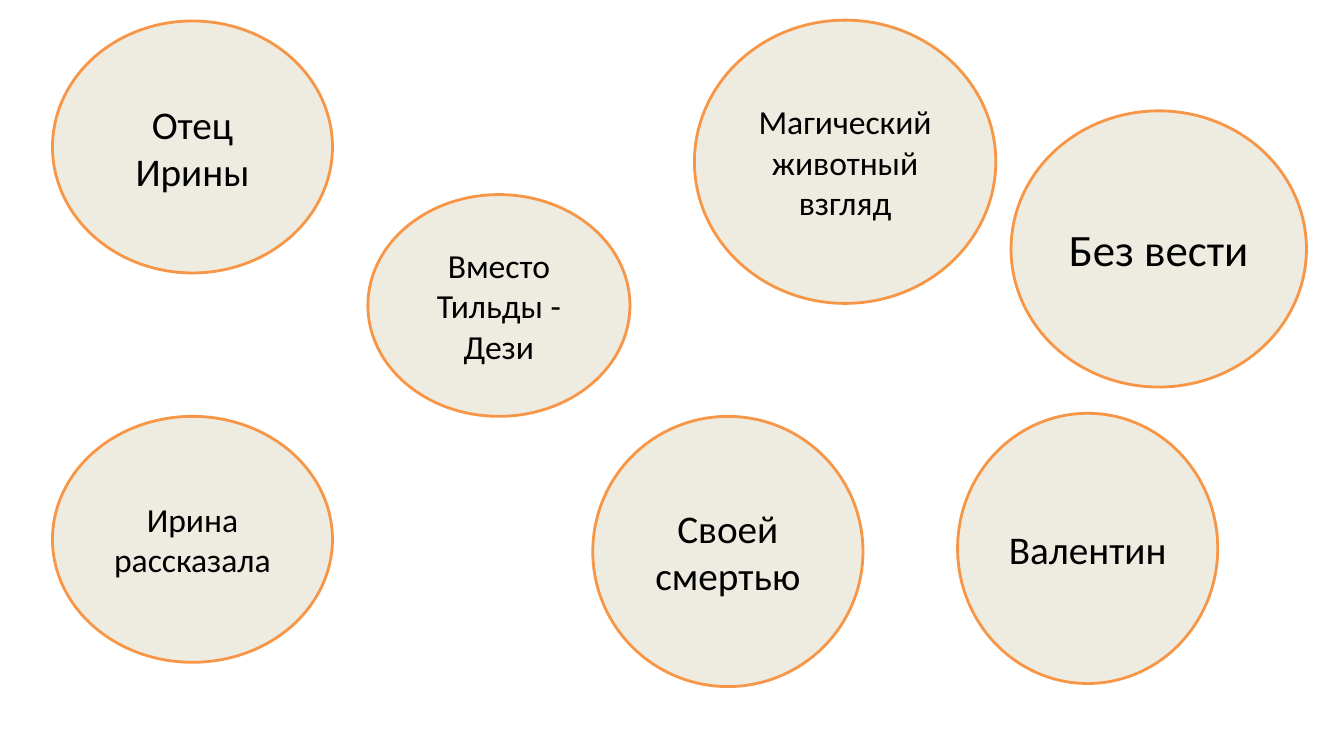
import dataclasses

import pptx
import pptx.dml.color
import pptx.enum.shapes
import pptx.enum.text
import pptx.util

Pt = pptx.util.Pt
RGB = pptx.dml.color.RGBColor


@dataclasses.dataclass(frozen=True)
class Theme:
    font: str = "Calibri"
    small: int = 24
    medium: int = 28
    large: int = 32
    outline_width: int = 2
    fill: RGB = RGB(0xEE, 0xEC, 0xE1)
    outline: RGB = RGB(0xF7, 0x96, 0x46)
    ink: RGB = RGB(0, 0, 0)


THEME = Theme()

# phrase, size, (left, top, width, height) in points
PHRASES = [
    ("Отец Ирины", THEME.medium, (37.5, 15, 200, 180)),
    ("Вместо Тильды - Дези", THEME.small, (262.8, 139, 187.2, 158.4)),
    ("Магический животный взгляд", THEME.small, (496, 14.4, 215.3, 202.3)),
    ("Своей смертью", THEME.medium, (423.4, 297.4, 193, 193)),
    ("Валентин", THEME.medium, (684, 295.2, 185.8, 193)),
    ("Без вести", THEME.large, (722.2, 79.2, 211, 197.3)),
    ("Ирина рассказала", THEME.small, (37.5, 297.4, 200, 175.7)),
]


def add_bubble(slide, phrase, size, box):
    """Draw one outlined ellipse with its phrase centred inside."""
    bubble = slide.shapes.add_shape(
        pptx.enum.shapes.MSO_SHAPE.OVAL, *(Pt(length) for length in box))
    bubble.shadow.inherit = False
    bubble.fill.solid()
    bubble.fill.fore_color.rgb = THEME.fill
    bubble.line.color.rgb = THEME.outline
    bubble.line.width = Pt(THEME.outline_width)

    frame = bubble.text_frame
    frame.text = phrase
    frame.word_wrap = True
    frame.vertical_anchor = pptx.enum.text.MSO_ANCHOR.MIDDLE
    paragraph = frame.paragraphs[0]
    paragraph.alignment = pptx.enum.text.PP_ALIGN.CENTER
    font = paragraph.runs[0].font
    font.name = THEME.font
    font.size = Pt(size)
    font.color.rgb = THEME.ink


def main():
    deck = pptx.Presentation()
    deck.slide_width, deck.slide_height = Pt(960), Pt(540)
    slide = deck.slides.add_slide(deck.slide_layouts[6])
    for phrase, size, box in PHRASES:
        add_bubble(slide, phrase, size, box)
    deck.save("out.pptx")


if __name__ == "__main__":
    main()
